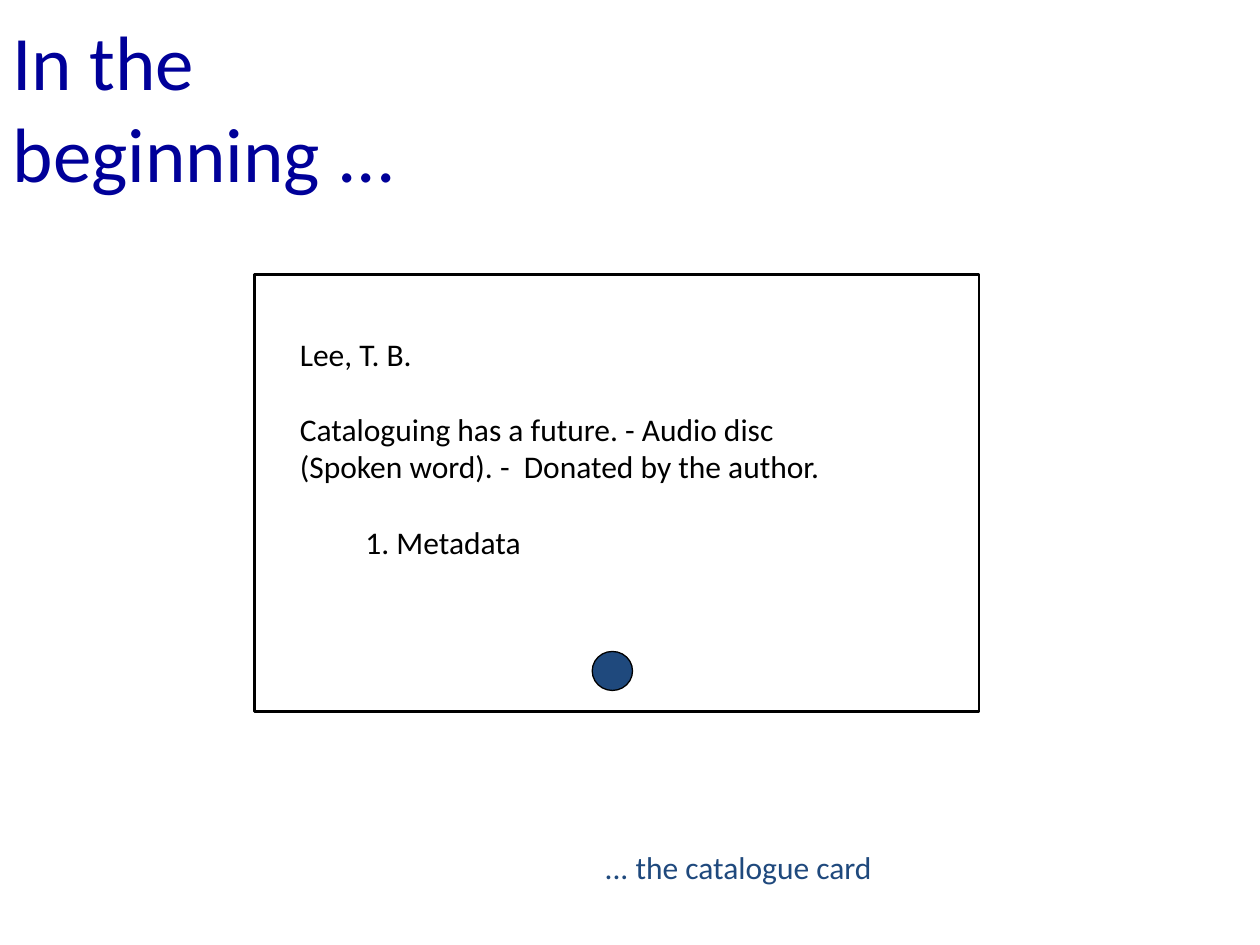
from dataclasses import dataclass

from pptx import Presentation
from pptx.dml.color import RGBColor
from pptx.enum.shapes import MSO_SHAPE
from pptx.enum.text import MSO_ANCHOR, PP_ALIGN
from pptx.util import Inches, Pt

RECT, OVAL = MSO_SHAPE.RECTANGLE, MSO_SHAPE.OVAL
TOP, MIDDLE = MSO_ANCHOR.TOP, MSO_ANCHOR.MIDDLE
LEFT = PP_ALIGN.LEFT


@dataclass(frozen=True)
class Theme:
    font: str = "Calibri"
    head: int = 44
    body: int = 18
    white: RGBColor = RGBColor(0xFF, 0xFF, 0xFF)
    black: RGBColor = RGBColor(0, 0, 0)
    navy: RGBColor = RGBColor(0, 0, 0x99)
    blue: RGBColor = RGBColor(0x1F, 0x49, 0x7D)


THEME = Theme()


@dataclass(frozen=True)
class Box:
    left: float
    top: float
    width: float
    height: float

    def emu(self) -> tuple:
        return tuple(map(Inches, (self.left, self.top, self.width, self.height)))


@dataclass(frozen=True)
class Form:
    kind: MSO_SHAPE
    box: Box
    fill: RGBColor
    line: float


@dataclass(frozen=True)
class Note:
    box: Box
    lines: tuple
    color: RGBColor = THEME.black
    inset: float = 0
    anchor: MSO_ANCHOR = TOP
    size: int = THEME.body


FORMS = (
    Form(RECT, Box(2.02, 2.18, 5.75, 3.47), THEME.white, 1.5),
    Form(OVAL, Box(4.7, 5.17, 0.32, 0.31), THEME.blue, 0.75),
)
TITLE = Note(Box(0, 0.52, 3.89, 0.64), ("In the beginning ...",),
             THEME.navy, 0.1, MIDDLE, THEME.head)
NOTES = (
    Note(Box(2.38, 2.66, 1.08, 0.3), ("Lee, T. B.",)),
    Note(Box(2.38, 3.25, 4.85, 0.61),
         ("Cataloguing has a future. - Audio disc",
          "(Spoken word). -  Donated by the author.")),
    Note(Box(2.9, 4.15, 1.38, 0.3), ("1. Metadata",)),
    Note(Box(4.7, 6.56, 4.39, 0.64), ("... the catalogue card",),
         THEME.blue, 0.1, MIDDLE),
)


def draw(slide, form: Form) -> None:
    shape = slide.shapes.add_shape(form.kind, *form.box.emu())
    shape.shadow.inherit = False
    shape.fill.solid()
    shape.fill.fore_color.rgb = form.fill
    shape.line.color.rgb = THEME.black
    shape.line.width = Pt(form.line)


def write(shape, note: Note) -> None:
    frame = shape.text_frame
    frame.word_wrap = True
    frame.vertical_anchor = note.anchor
    frame.margin_left = frame.margin_right = Inches(note.inset)
    frame.margin_top = frame.margin_bottom = Inches(note.inset / 2)
    frame.text = "\n".join(note.lines)
    for para in frame.paragraphs:
        para.alignment = LEFT
        para.font.name = THEME.font
        para.font.size = Pt(note.size)
        para.font.color.rgb = note.color


def main() -> None:
    deck = Presentation()
    deck.slide_width, deck.slide_height = Inches(10), Inches(7.5)
    slide = deck.slides.add_slide(deck.slide_layouts[5])
    for form in FORMS:
        draw(slide, form)
    for note in NOTES:
        write(slide.shapes.add_textbox(*note.box.emu()), note)
    title = slide.shapes.title
    title.left, title.top, title.width, title.height = TITLE.box.emu()
    write(title, TITLE)
    deck.save("out.pptx")


if __name__ == "__main__":
    main()
